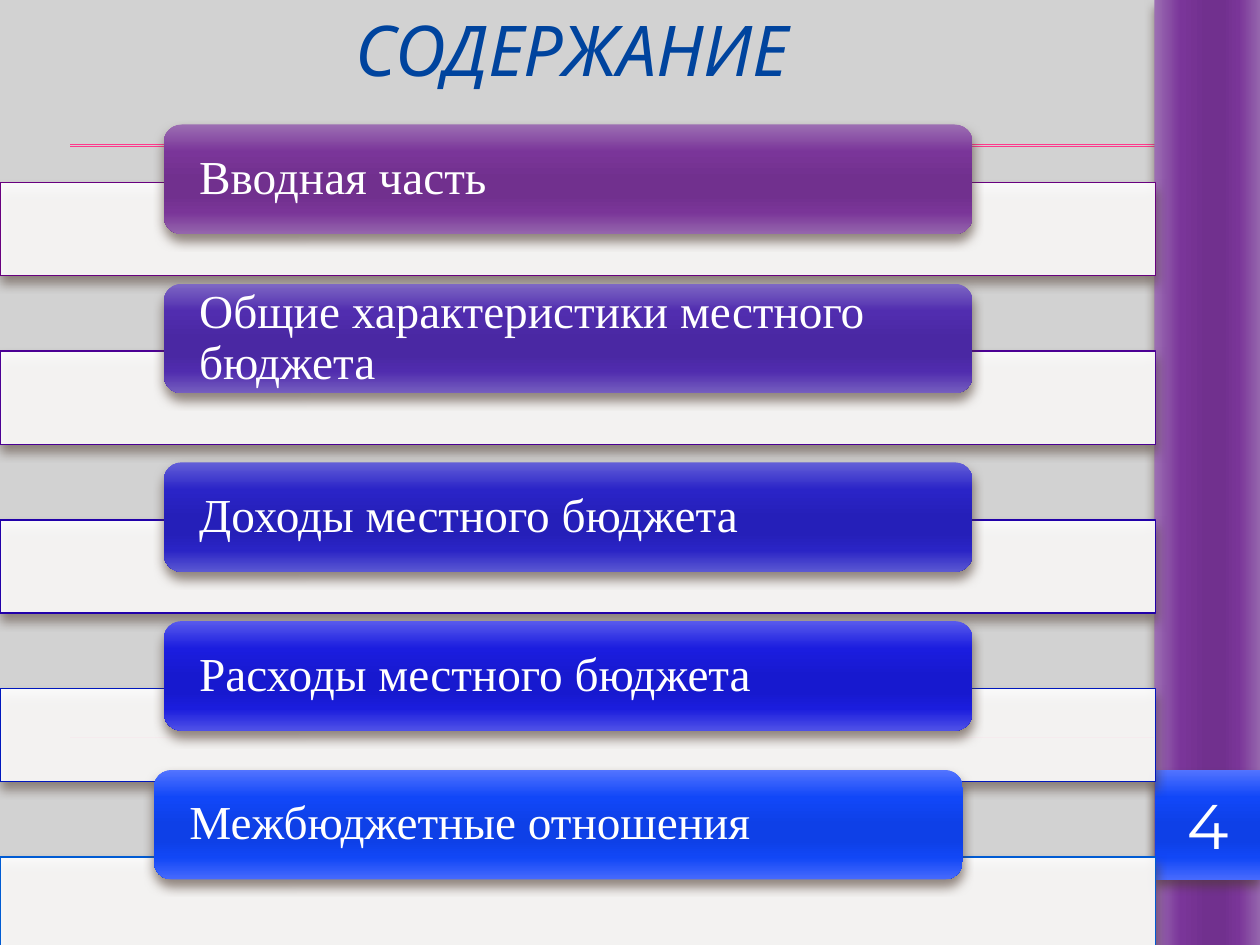
import pptx
import pptx.dml.color
import pptx.enum.shapes
import pptx.enum.text
import pptx.oxml.ns
import pptx.util
from lxml import etree

Cm, Pt = pptx.util.Cm, pptx.util.Pt
RGB = pptx.dml.color.RGBColor
SHAPES = pptx.enum.shapes.MSO_SHAPE
ANCHOR = pptx.enum.text.MSO_ANCHOR
ALIGN = pptx.enum.text.PP_ALIGN
qn = pptx.oxml.ns.qn

BACKGROUND = RGB(0xD2, 0xD2, 0xD2)
WHITE = RGB(0xFF, 0xFF, 0xFF)
PINK = RGB(0xFF, 0x38, 0x8C)
TITLE_BLUE = RGB(0x00, 0x44, 0x9E)
TITLE_EDGE = RGB(0x4E, 0x00, 0x5F)
SHADOW = RGB(0x4E, 0x3B, 0x30)

STOPS = (0, 25, 50, 65, 80, 100)
PURPLE = [RGB.from_string(c) for c in "9C6FB3 7A3599 71308E 71308E 7A3598 9566AD".split()]
VIOLET = [RGB.from_string(c) for c in "7E68C4 512DAF 4A28A3 4A28A3 502CAE 765FBF".split()]
INDIGO = [RGB.from_string(c) for c in "6460D8 2A24C7 251FB9 251FB9 2A24C5 5B58D2".split()]
ULTRAMARINE = [RGB.from_string(c) for c in "585AEC 1B1DDF 1719CF 1719CF 1B1DDD 4F51E7".split()]
AZURE = [RGB.from_string(c) for c in "5374FF 1147F8 0E40E7 0E40E7 1147F6 476AFD".split()]

# heading, card left, card top (cm), card gradient, band outline
SECTIONS = [
    ("Вводная часть", 3.3, 2.51, PURPLE, RGB(0x68, 0x00, 0x7F)),
    ("Общие характеристики местного бюджета", 3.3, 5.72, VIOLET, RGB(0x4B, 0x00, 0x94)),
    ("Доходы местного бюджета", 3.3, 9.32, INDIGO, RGB(0x21, 0x00, 0xA9)),
    ("Расходы местного бюджета", 3.3, 12.52, ULTRAMARINE, RGB(0x00, 0x17, 0xBE)),
    ("Межбюджетные отношения", 3.1, 15.52, AZURE, RGB(0x00, 0x5B, 0xD3)),
]
BAND_TOP, BAND_PITCH = 3.68, 3.4
BAND_WIDTH, BAND_HEIGHT = 23.29, 1.88
CARD_WIDTH, CARD_HEIGHT = 16.31, 2.21


def add_color(parent, color, alpha=None):
    node = etree.SubElement(parent, qn("a:srgbClr"), val=str(color))
    if alpha is not None:
        etree.SubElement(node, qn("a:alpha"), val=str(alpha * 1000))


def add_panel(slide, kind, left, top, width, height):
    """Add a borderless shape, box in cm, with the soft drop shadow."""
    panel = slide.shapes.add_shape(kind, Cm(left), Cm(top), Cm(width), Cm(height))
    panel.line.fill.background()
    panel.shadow.inherit = False
    effects = panel._element.spPr.find(qn("a:effectLst"))
    shadow = etree.SubElement(
        effects, qn("a:outerShdw"), blurRad=str(Pt(6)), dist=str(Pt(4)),
        dir="5400000", rotWithShape="0")
    add_color(shadow, SHADOW, 60)
    return panel


def fill_gradient(panel, colors):
    panel.fill.gradient()
    panel.fill.gradient_angle = 270
    stop_list = panel._element.spPr.find(qn("a:gradFill")).find(qn("a:gsLst"))
    for old_stop in list(stop_list):
        stop_list.remove(old_stop)
    for position, color in zip(STOPS, colors):
        stop = etree.SubElement(stop_list, qn("a:gs"), pos=str(position * 1000))
        add_color(stop, color)


def write(panel, text, font_name, size, align):
    frame = panel.text_frame
    frame.word_wrap = True
    frame.vertical_anchor = ANCHOR.MIDDLE
    paragraph = frame.paragraphs[0]
    paragraph.alignment = align
    run = paragraph.add_run()
    run.text = text
    run.font.name = font_name
    run.font.size = Pt(size)
    run.font.color.rgb = WHITE
    return paragraph


def add_rules(slide, left, right, tops):
    for top in tops:
        rule = slide.shapes.add_connector(
            pptx.enum.shapes.MSO_CONNECTOR.STRAIGHT, Cm(left), Cm(top), Cm(right), Cm(top))
        rule.line.color.rgb = PINK
        rule.line.width = Pt(0.75)
        etree.SubElement(rule._element.spPr, qn("a:effectLst"))


def add_side_bar(slide, left, top, width, height):
    """Add the vertical bar as a lying one turned about its centre."""
    bar = add_panel(slide, SHAPES.RECTANGLE, left + (width - height) / 2,
                    top + (height - width) / 2, height, width)
    bar.rotation = 270
    fill_gradient(bar, PURPLE)


def add_page_number(slide, left, top, width, height):
    tile = add_panel(slide, SHAPES.RECTANGLE, left, top, width, height)
    fill_gradient(tile, AZURE)
    write(tile, "4", "Montserrat", 36, ALIGN.CENTER)


def add_band(slide, left, top, width, height, outline):
    band = add_panel(slide, SHAPES.RECTANGLE, left, top, width, height)
    band.fill.solid()
    band.fill.fore_color.rgb = WHITE
    white = band._element.spPr.find(qn("a:solidFill"))[0]
    etree.SubElement(white, qn("a:alpha"), val="90000")
    band.line.color.rgb = outline
    band.line.width = Pt(0.79)


def add_card(slide, left, top, width, height, heading, colors):
    card = add_panel(slide, SHAPES.ROUNDED_RECTANGLE, left, top, width, height)
    fill_gradient(card, colors)
    frame = card.text_frame
    # The rounded corners already inset the text by about 0.1 cm.
    frame.margin_left = frame.margin_right = Cm(0.61)
    frame.margin_top = frame.margin_bottom = 0
    write(card, heading, "Times New Roman", 27, ALIGN.LEFT).line_spacing = 0.9


def set_title(slide, left, top, width, height):
    title = slide.shapes.title
    title.left, title.top, title.width, title.height = Cm(left), Cm(top), Cm(width), Cm(height)
    frame = title.text_frame
    frame.word_wrap = True
    frame.vertical_anchor = ANCHOR.TOP
    paragraph = frame.paragraphs[0]
    paragraph.alignment = ALIGN.LEFT
    run = paragraph.add_run()
    run.text = "СОДЕРЖАНИЕ"
    run.font.name = "Karla"
    run.font.size = Pt(40)
    run.font.italic = True
    run.font.color.rgb = TITLE_BLUE
    edge = etree.Element(qn("a:ln"), w=str(Pt(0.75)))
    add_color(etree.SubElement(edge, qn("a:solidFill")), TITLE_EDGE)
    run.font._element.insert(0, edge)


def main():
    deck = pptx.Presentation()
    deck.slide_width, deck.slide_height = Cm(25.4), Cm(19.05)
    slide = deck.slides.add_slide(deck.slide_layouts[5])
    slide.background.fill.solid()
    slide.background.fill.fore_color.rgb = BACKGROUND

    set_title(slide, 6.91, 0, 10.01, 1.96)
    add_rules(slide, 1.42, 25.4, (2.92, 2.95, 14.86))
    add_side_bar(slide, 23.27, 0, 2.13, 19.05)
    add_page_number(slide, 23.29, 15.52, 2.11, CARD_HEIGHT)
    for row, (heading, left, top, colors, outline) in enumerate(SECTIONS):
        add_band(slide, 0, BAND_TOP + row * BAND_PITCH, BAND_WIDTH, BAND_HEIGHT, outline)
        add_card(slide, left, top, CARD_WIDTH, CARD_HEIGHT, heading, colors)

    deck.save("out.pptx")


if __name__ == "__main__":
    main()
